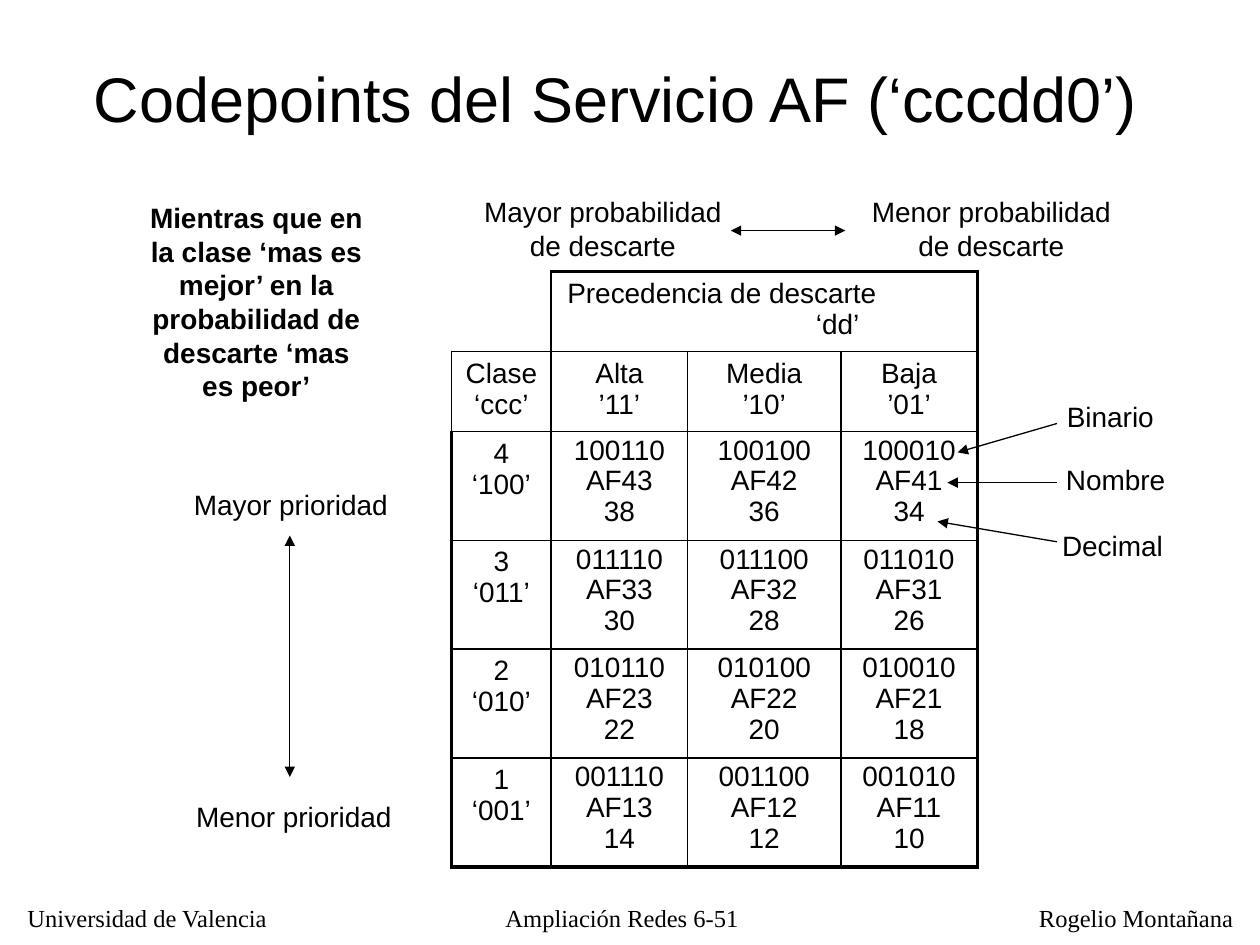
from lxml import etree
from pptx import Presentation
from pptx import util as u
from pptx.dml import color
from pptx.enum import shapes, text
from pptx.oxml import ns

INK = "000000"
LEFT, CENTER = text.PP_ALIGN.LEFT, text.PP_ALIGN.CENTER
THIN, THICK = 1, 2.25


def rgb(value):
    """Return the colour for a hex string."""
    return color.RGBColor.from_string(value)


def format_paragraph(para, size, font="Arial", align=CENTER, bold=False):
    """Set alignment and font of a whole paragraph."""
    para.alignment = align
    para.font.size = u.Pt(size)
    para.font.name = font
    para.font.bold = bold
    para.font.color.rgb = rgb(INK)


def add_title(page, title, left, top, width, height):
    """Fill and place the title placeholder."""
    box = page.shapes.title
    box.left, box.top, box.width, box.height = map(u.Pt, (left, top, width, height))
    box.text_frame.text = title
    box.text_frame.vertical_anchor = text.MSO_ANCHOR.MIDDLE
    format_paragraph(box.text_frame.paragraphs[0], 36)


def add_label(page, label, left, top, width, height, wrap=False, size=16, **style):
    """Add a text box with one paragraph per line of the label."""
    box = page.shapes.add_textbox(*map(u.Pt, (left, top, width, height)))
    box.text_frame.word_wrap = wrap
    box.text_frame.auto_size = text.MSO_AUTO_SIZE.SHAPE_TO_FIT_TEXT
    box.text_frame.text = label
    for para in box.text_frame.paragraphs:
        format_paragraph(para, size, **style)


def add_arrow(page, start, end, double=False):
    """Add a straight arrow with one or two heads."""
    line = page.shapes.add_connector(
        shapes.MSO_CONNECTOR.STRAIGHT, *map(u.Pt, (*start, *end)))
    line.line.width = u.Pt(0.75)
    line.line.color.rgb = rgb(INK)
    stroke = line.line._get_or_add_ln()
    for end_name in ("headEnd", "tailEnd") if double else ("tailEnd",):
        etree.SubElement(stroke, ns.qn(f"a:{end_name}"), type="triangle")
    etree.SubElement(line._element.spPr, ns.qn("a:effectLst"))


def set_borders(cell, widths):
    """Draw the left, right, top and bottom borders, where zero means none."""
    properties = cell._tc.get_or_add_tcPr()
    for index, (side, width) in enumerate(zip("LRTB", widths)):
        border = etree.Element(ns.qn(f"a:ln{side}"), w=str(u.Pt(width)))
        if width:
            fill = etree.SubElement(border, ns.qn("a:solidFill"))
            etree.SubElement(fill, ns.qn("a:srgbClr"), val=INK)
        else:
            etree.SubElement(border, ns.qn("a:noFill"))
        properties.insert(index, border)


def fill_cell(cell, content, before=3.2, spacing=None):
    """Write centred paragraphs into a cell."""
    cell.text_frame.text = content
    for para in cell.text_frame.paragraphs:
        format_paragraph(para, 16)
        para.space_before = u.Pt(before)
        para.line_spacing = spacing


def add_codepoint_table(page):
    """Add the table of codepoints by class and drop precedence."""
    widths, heights = (57, 78, 87.5, 78), [45.7] * 2 + [62.2] * 4
    frame = page.shapes.add_table(
        6, 4, *map(u.Pt, (258, 155.2, sum(widths), sum(heights))))
    table = frame.table
    table.first_row = table.horz_banding = False
    for column, width in zip(table.columns, widths):
        column.width = u.Pt(width)
    for row, height in zip(table.rows, heights):
        row.height = u.Pt(height)

    for row in range(6):
        for column in range(4):
            cell = table.cell(row, column)
            cell.fill.background()
            corner = row == column == 0
            set_borders(cell, (
                0 if corner else THICK if column == 0 and row > 1 else THIN,
                THICK if column == 3 or (row == 0 and column > 0) else THIN,
                0 if corner else THICK if row == 0 else THIN,
                THICK if row == 5 else THIN))

    heading = table.cell(0, 1)
    heading.merge(table.cell(0, 3))
    fill_cell(heading, "Precedencia de descarte\n‘dd’")
    for para, indent in zip(heading.text_frame.paragraphs, (2, 144)):
        para.alignment = LEFT
        para._p.get_or_add_pPr().set("marL", str(u.Pt(indent)))
    heading.text_frame.paragraphs[1].space_before = u.Pt(0)

    for column, name in enumerate(
            ("Clase\v‘ccc’", "Alta\v’11’", "Media\v’10’", "Baja\v’01’")):
        fill_cell(table.cell(1, column), name)
    for row, level in enumerate((4, 3, 2, 1), 2):
        fill_cell(table.cell(row, 0), f"{level}\v‘{level:03b}’")
        for column, drop in enumerate((3, 2, 1), 1):
            code = level * 8 + drop * 2
            fill_cell(table.cell(row, column),
                      f"{code:06b}\nAF{level}{drop}\n{code}", 1.6, 0.9)


def main():
    """Build the slide and save it."""
    deck = Presentation()
    deck.slide_width, deck.slide_height = u.Pt(720), u.Pt(540)
    page = deck.slides.add_slide(deck.slide_layouts[5])

    footer = {"size": 14, "font": "Times New Roman"}
    add_label(page, "Universidad de Valencia", 8.6, 512.6, 153, 24, align=LEFT, **footer)
    add_label(page, "Rogelio Montañana", 586.6, 512.6, 127, 24, align=LEFT, **footer)
    add_label(page, "Ampliación Redes 6-51", 246.5, 512.6, 218, 27, wrap=True, **footer)
    add_title(page, "Codepoints del Servicio AF (‘cccdd0’)", 37.4, 26.2, 628.6, 58.3)
    add_codepoint_table(page)

    add_label(page, "Mayor prioridad", 103.7, 275, 127, 26.6, align=LEFT)
    add_label(page, "Menor prioridad", 105, 453.6, 128, 26.6, align=LEFT)
    add_arrow(page, (165.6, 306), (165.6, 444), double=True)
    add_label(page, "Menor probabilidad\nde descarte", 490, 107.6, 153, 46)
    add_label(page, "Mayor probabilidad\nde descarte", 268, 107.6, 153, 46)
    add_arrow(page, (417.6, 131.8), (483, 131.8), double=True)
    add_label(page, "Mientras que en la clase ‘mas es mejor’ en la probabilidad "
              "de descarte ‘mas es peor’", 75.6, 111.2, 141.8, 122.4,
              wrap=True, bold=True)

    for name, left, top, width, start, end in (
            ("Binario", 602.6, 224.6, 66, 242, (547.2, 258.5)),
            ("Nombre", 602, 260.6, 73, 275.8, (541.4, 275.8)),
            ("Decimal", 599.8, 298.4, 74, 309.6, (535.7, 298))):
        add_label(page, name, left, top, width, 26.6, align=LEFT)
        add_arrow(page, (604, start), end)
    deck.save("out.pptx")


if __name__ == "__main__":
    main()
